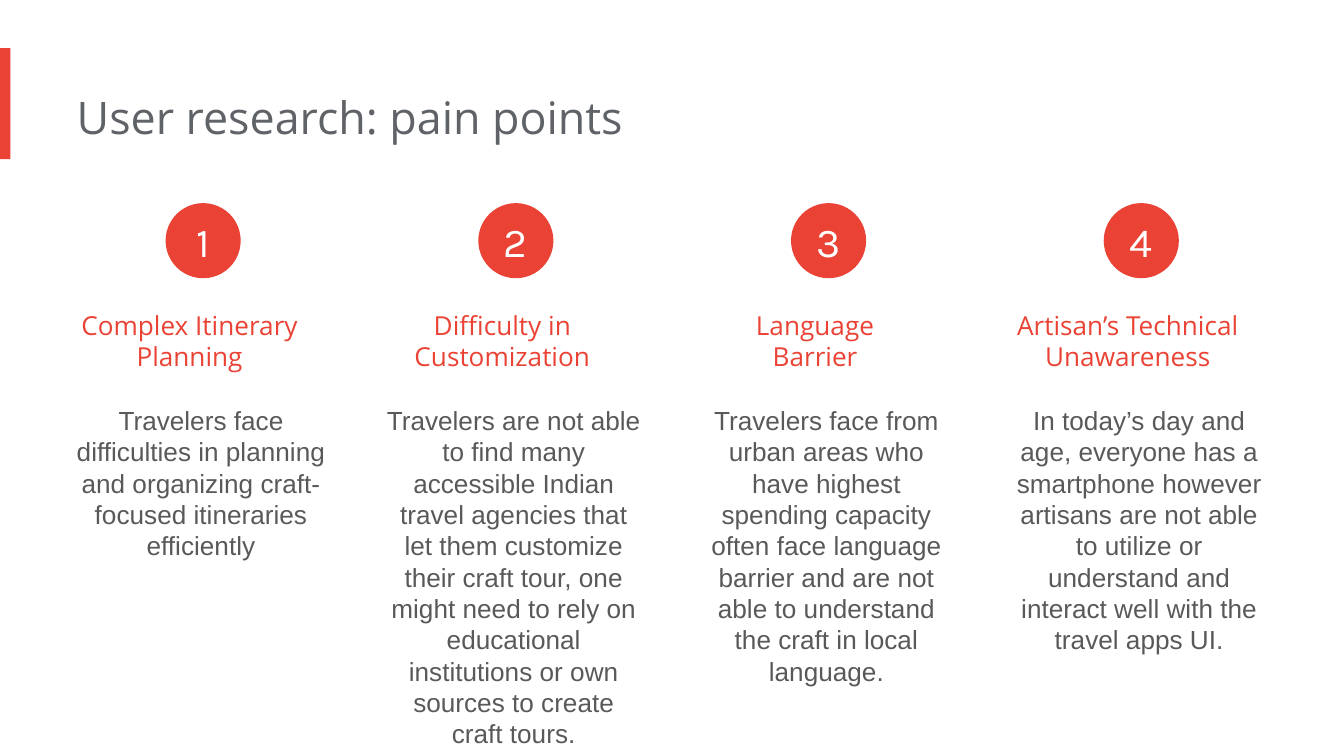
from pptx import Presentation
from pptx.dml.color import RGBColor
from pptx.enum.shapes import MSO_SHAPE
from pptx.enum.text import MSO_ANCHOR, MSO_AUTO_SIZE, PP_ALIGN
from pptx.util import Cm, Pt

LEFT, CENTER = PP_ALIGN.LEFT, PP_ALIGN.CENTER
TOP, MIDDLE = MSO_ANCHOR.TOP, MSO_ANCHOR.MIDDLE
GROW, FIXED = MSO_AUTO_SIZE.SHAPE_TO_FIT_TEXT, MSO_AUTO_SIZE.NONE
RECTANGLE, OVAL = MSO_SHAPE.RECTANGLE, MSO_SHAPE.OVAL
TITLE_ONLY = 5

COLORS = {"red": "EA4335", "title": "5F6368", "body": "595959", "white": "FFFFFF"}

# Lengths in centimetres
FIRST_CENTER, COLUMN_PITCH = 3.84, 5.91
CIRCLE_SIZE, CIRCLE_TOP = 1.42, 3.84
HEADING_TOP, HEADING_HEIGHT, HEADING_SHIFT = 5.59, 1.7, -0.13
BODY_TOP, BODY_WIDTH, BODY_SHIFT = 7.51, 5.33, -0.04
FLUSH_LEFT = (0, 0.25, 0.25, 0.25)
BODY_INSETS = (0.25, 0.13, 0.25, 0.13)

# Heading, heading width, body, body height
PAIN_POINTS = [
    ("Complex Itinerary Planning", 5.21,
     "Travelers face difficulties in planning and organizing craft-focused "
     "itineraries efficiently", 3.25),
    ("Difficulty in Customization", 5.21,
     "Travelers are not able to find many accessible Indian travel agencies that "
     "let them customize their craft tour, one might need to rely on educational "
     "institutions or own sources to create craft tours.", 5.64),
    ("Language Barrier", 2.72,
     "Travelers face from urban areas who have highest spending capacity often "
     "face language barrier and are not able to understand the craft in local "
     "language.", 5.05),
    ("Artisan’s Technical Unawareness", 5.21,
     "In today’s day and age, everyone has a smartphone however artisans are not "
     "able to utilize or understand and interact well with the travel apps UI.", 4.45),
]


def write_text(shape, text, *, font, size, color, align=CENTER, anchor=TOP,
               insets=FLUSH_LEFT, auto_size=GROW):
    frame = shape.text_frame
    frame.word_wrap = True
    frame.auto_size = auto_size
    frame.vertical_anchor = anchor
    (frame.margin_left, frame.margin_top,
     frame.margin_right, frame.margin_bottom) = map(Cm, insets)
    paragraph = frame.paragraphs[0]
    paragraph.alignment = align
    run = paragraph.add_run()
    run.text = text
    run.font.name = font
    run.font.size = Pt(size)
    run.font.color.rgb = RGBColor.from_string(COLORS[color])


def add_red_shape(slide, kind, left, top, width, height):
    shape = slide.shapes.add_shape(kind, Cm(left), Cm(top), Cm(width), Cm(height))
    shape.shadow.inherit = False
    shape.fill.solid()
    shape.fill.fore_color.rgb = RGBColor.from_string(COLORS["red"])
    shape.line.fill.background()
    return shape


def add_centered_text(slide, text, center, top, width, height, **text_format):
    box = slide.shapes.add_textbox(Cm(center - width / 2), Cm(top), Cm(width), Cm(height))
    write_text(box, text, **text_format)


def add_title(slide, text):
    title = slide.shapes.title
    title.left, title.top, title.width, title.height = map(Cm, (1.45, 1.45, 17.09, 1.55))
    write_text(title, text, font="Open Sans", size=24, color="title", align=LEFT)


def add_pain_point(slide, number, heading, heading_width, body, body_height):
    center = FIRST_CENTER + (number - 1) * COLUMN_PITCH
    circle = add_red_shape(slide, OVAL, center - CIRCLE_SIZE / 2, CIRCLE_TOP,
                           CIRCLE_SIZE, CIRCLE_SIZE)
    write_text(circle, str(number), font="Karla", size=22, color="white",
               anchor=MIDDLE, insets=(0, 0, 0, 0), auto_size=FIXED)
    add_centered_text(slide, heading, center + HEADING_SHIFT, HEADING_TOP,
                      heading_width, HEADING_HEIGHT,
                      font="Open Sans", size=14, color="red")
    add_centered_text(slide, body, center + BODY_SHIFT, BODY_TOP, BODY_WIDTH, body_height,
                      font="Arial", size=14, color="body", insets=BODY_INSETS)


def main():
    presentation = Presentation()
    presentation.slide_width, presentation.slide_height = Cm(25.4), Cm(14.29)
    slide = presentation.slides.add_slide(presentation.slide_layouts[TITLE_ONLY])
    add_red_shape(slide, RECTANGLE, 0, 0.91, 0.2, 2.1)
    add_title(slide, "User research: pain points")
    for number, pain_point in enumerate(PAIN_POINTS, start=1):
        add_pain_point(slide, number, *pain_point)
    presentation.save("out.pptx")


if __name__ == "__main__":
    main()
